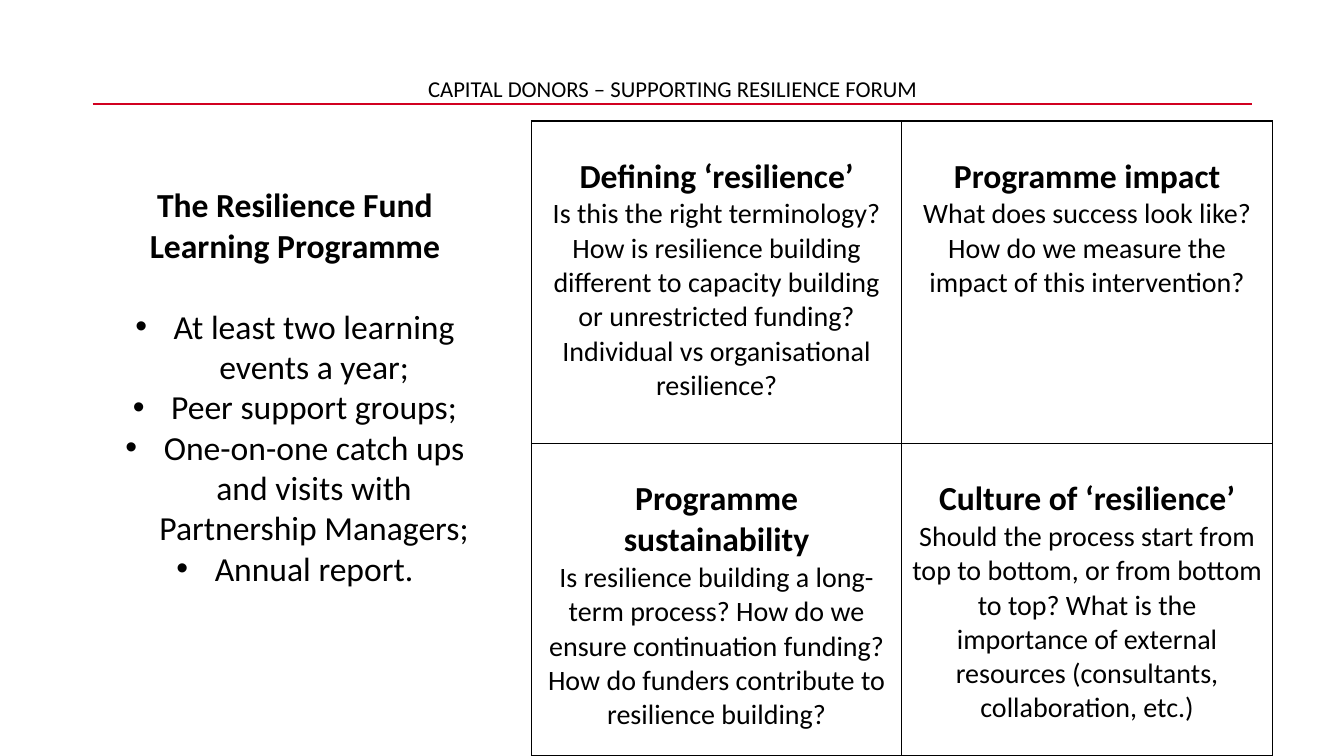
from lxml import etree
from pptx import Presentation
from pptx.dml.color import RGBColor
from pptx.enum.shapes import MSO_CONNECTOR
from pptx.enum.text import MSO_ANCHOR, MSO_AUTO_SIZE, PP_ALIGN
from pptx.oxml import parse_xml
from pptx.oxml.ns import nsdecls, qn
from pptx.util import Inches, Pt

BLACK = RGBColor(0x00, 0x00, 0x00)
RED = RGBColor(0xD1, 0x00, 0x20)
FONT = "Calibri"

LEARNING_OFFERS = [
    "At least two learning events a year;",
    "Peer support groups;",
    "One-on-one catch ups and visits with Partnership Managers;",
    "Annual report.",
]
THEMES = [
    [
        ["Defining ‘resilience’",
         "Is this the right terminology? How is resilience building different to "
         "capacity building or unrestricted funding? Individual vs organisational "
         "resilience?"],
        ["Programme impact",
         "What does success look like?",
         "How do we measure the impact of this intervention?"],
    ],
    [
        ["Programme sustainability",
         "Is resilience building a long-term process? How do we ensure continuation "
         "funding? How do funders contribute to resilience building?"],
        ["Culture of ‘resilience’",
         "Should the process start from top to bottom, or from bottom to top? What is "
         "the importance of external resources (consultants, collaboration, etc.)"],
    ],
]


def style(paragraph, size, bold=False):
    paragraph.alignment = PP_ALIGN.CENTER
    for run in paragraph.runs:
        run.font.name = FONT
        run.font.size = Pt(size)
        run.font.bold = bold
        run.font.color.rgb = BLACK


def add_bullet(paragraph):
    properties = paragraph._p.get_or_add_pPr()
    properties.set("marL", str(Inches(0.38)))
    properties.set("indent", str(-Inches(0.38)))
    properties.append(parse_xml(f'<a:buFont {nsdecls("a")} typeface="Arial"/>'))
    properties.append(parse_xml(f'<a:buChar {nsdecls("a")} char="•"/>'))


def add_borders(cell):
    properties = cell._tc.get_or_add_tcPr()
    for position, side in enumerate(("lnL", "lnR", "lnT", "lnB")):
        properties.insert(position, parse_xml(
            f'<a:{side} {nsdecls("a")} w="{Pt(1)}"><a:solidFill>'
            f'<a:srgbClr val="{BLACK}"/></a:solidFill></a:{side}>'))


def build_header(slide, left, top, width, height):
    # Forum title
    title = slide.shapes.title
    title.left, title.top, title.width, title.height = left, top, width, height
    frame = title.text_frame
    frame.text = "CAPITAL DONORS – SUPPORTING RESILIENCE FORUM"
    frame.auto_size = MSO_AUTO_SIZE.NONE
    frame.vertical_anchor = MSO_ANCHOR.TOP
    frame.paragraphs[0].line_spacing = 1.0
    style(frame.paragraphs[0], 16.2)

    # Red rule under the title
    rule_y = top + height + Inches(0.06)
    rule = slide.shapes.add_connector(
        MSO_CONNECTOR.STRAIGHT, left, rule_y, left + width, rule_y)
    rule.line.color.rgb = RED
    rule.line.width = Pt(1)
    etree.SubElement(rule._element.spPr, qn("a:effectLst"))


def build_learning_programme(slide, left, top, width, height):
    programme = slide.shapes.add_textbox(left, top, width, height)
    frame = programme.text_frame
    frame.word_wrap = True
    frame.text = "The Resilience Fund\vLearning Programme"
    style(frame.paragraphs[0], 24, bold=True)

    for index, offer in enumerate(LEARNING_OFFERS):
        paragraph = frame.add_paragraph()
        paragraph.text = offer
        add_bullet(paragraph)
        if index == 0:
            paragraph.space_before = Pt(29)
        style(paragraph, 24)


def build_themes(slide, left, top, width, row_heights):
    themes = slide.shapes.add_table(
        len(THEMES), len(THEMES[0]), left, top, width, sum(row_heights)).table
    themes.first_row = themes.horz_banding = False
    for row, row_height, row_themes in zip(themes.rows, row_heights, THEMES):
        row.height = row_height
        for cell, lines in zip(row.cells, row_themes):
            cell.fill.background()
            cell.margin_top = Inches(0.35)
            add_borders(cell)
            cell.text_frame.text = "\n".join(lines)
            heading, *questions = cell.text_frame.paragraphs
            style(heading, 24, bold=True)
            for question in questions:
                style(question, 20)


def main():
    presentation = Presentation()
    presentation.slide_width = Inches(13.33)
    presentation.slide_height = Inches(7.5)
    slide = presentation.slides.add_slide(presentation.slide_layouts[5])

    build_header(slide, Inches(0.92), Inches(0.69), Inches(11.5), Inches(0.28))
    build_learning_programme(
        slide, Inches(0.92), Inches(1.78), Inches(4.01), Inches(5.35))
    build_themes(slide, Inches(5.27), Inches(1.2), Inches(7.35),
                 [Inches(3.2), Inches(3.1)])
    presentation.save("out.pptx")


if __name__ == "__main__":
    main()
